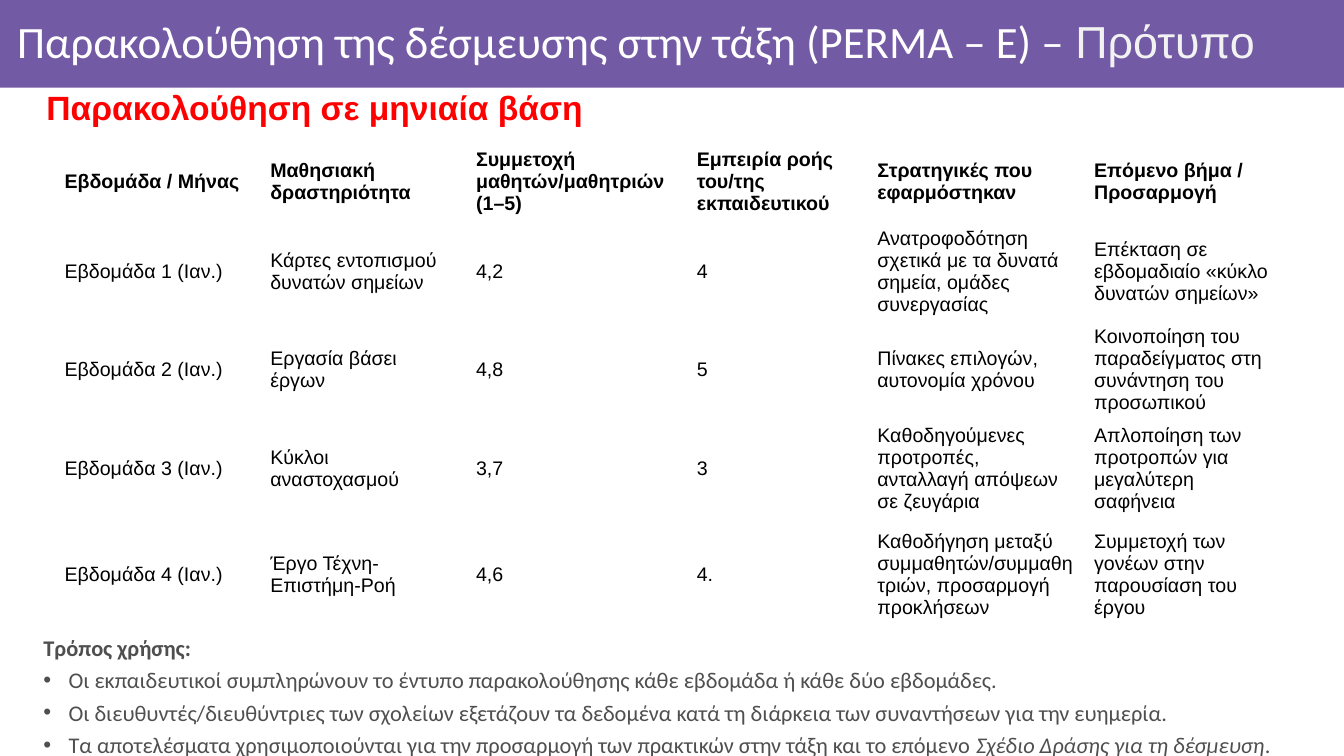
from pptx import Presentation
from pptx.dml.color import RGBColor
from pptx.enum.shapes import MSO_SHAPE
from pptx.enum.text import MSO_ANCHOR, MSO_AUTO_SIZE, PP_ALIGN
from pptx.util import Pt
from lxml.etree import SubElement
from pptx.oxml.ns import qn

HUES = {"band": "735AA5", "white": "FFFFFF", "pale": "F2F2F2",
        "red": "FF0000", "black": "000000", "grey": "4F4F50"}
WIDTHS = [147, 147, 157.7, 129, 154.8, 147]
HEIGHTS = [58.3, 58.3, 58.3, 58.3, 82]
ROWS = [
    ["Εβδομάδα / Μήνας", "Μαθησιακή δραστηριότητα",
     "Συμμετοχή μαθητών/μαθητριών (1–5)",
     "Εμπειρία ροής του/της εκπαιδευτικού",
     "Στρατηγικές που εφαρμόστηκαν", "Επόμενο βήμα / Προσαρμογή"],
    ["Εβδομάδα 1 (Ιαν.)", "Κάρτες εντοπισμού δυνατών σημείων", "4,2", "4",
     "Ανατροφοδότηση σχετικά με τα δυνατά σημεία, ομάδες συνεργασίας",
     "Επέκταση σε εβδομαδιαίο «κύκλο δυνατών σημείων»"],
    ["Εβδομάδα 2 (Ιαν.)", "Εργασία βάσει έργων", "4,8", "5",
     "Πίνακες επιλογών, αυτονομία χρόνου",
     "Κοινοποίηση του παραδείγματος στη συνάντηση του προσωπικού"],
    ["Εβδομάδα 3 (Ιαν.)", "Κύκλοι αναστοχασμού", "3,7", "3",
     "Καθοδηγούμενες προτροπές, ανταλλαγή απόψεων σε ζευγάρια",
     "Απλοποίηση των προτροπών για μεγαλύτερη σαφήνεια"],
    ["Εβδομάδα 4 (Ιαν.)", "Έργο Τέχνη-Επιστήμη-Ροή", "4,6", "4.",
     "Καθοδήγηση μεταξύ συμμαθητών/συμμαθητριών, προσαρμογή προκλήσεων",
     "Συμμετοχή των γονέων στην παρουσίαση του έργου"],
]
USES = [
    ["Οι εκπαιδευτικοί συμπληρώνουν το έντυπο παρακολούθησης κάθε εβδομάδα ή κάθε δύο εβδομάδες."],
    ["Οι διευθυντές/διευθύντριες των σχολείων εξετάζουν τα δεδομένα κατά τη διάρκεια των συναντήσεων για την ευημερία."],
    ["Τα αποτελέσματα χρησιμοποιούνται για την προσαρμογή των πρακτικών στην τάξη και το επόμενο ",
     "Σχέδιο Δράσης για τη δέσμευση", "."],
]


class Page:
    def __init__(self, slide):
        self.slide = slide
        self.sans = "Arial"
        self.text = "Calibri"

    def hue(self, name):
        return RGBColor.from_string(HUES[name])

    def band(self, left, top, width, height):
        shape = self.slide.shapes.add_shape(
            MSO_SHAPE.RECTANGLE, Pt(left), Pt(top), Pt(width), Pt(height))
        shape.shadow.inherit = False
        shape.fill.solid()
        shape.fill.fore_color.rgb = self.hue("band")
        shape.line.fill.background()
        self.slide.shapes._spTree.insert(2, shape._element)

    def frame(self, index, left, top, width, height, anchor=MSO_ANCHOR.MIDDLE):
        holder = self.slide.placeholders[index]
        holder.left, holder.top = Pt(left), Pt(top)
        holder.width, holder.height = Pt(width), Pt(height)
        frame = holder.text_frame
        frame.word_wrap = True
        frame.auto_size = MSO_AUTO_SIZE.NONE
        frame.vertical_anchor = anchor
        return frame

    def run(self, para, text, size, font, color, bold=False, italic=False):
        run = para.add_run()
        run.text = text
        run.font.size = Pt(size)
        run.font.name = font
        run.font.color.rgb = self.hue(color)
        run.font.bold = bold
        run.font.italic = italic

    def indent(self, para, mark=None):
        props = para._p.get_or_add_pPr()
        props.set("marL", str(Pt(36)))
        props.set("indent", str(Pt(-18)))
        if mark:
            tint = SubElement(props, qn("a:buClr"))
            SubElement(tint, qn("a:srgbClr")).set("val", HUES["grey"])
            SubElement(props, qn("a:buFont")).set("typeface", self.sans)
            SubElement(props, qn("a:buChar")).set("char", mark)
        else:
            SubElement(props, qn("a:buNone"))

    def title(self, parts):
        frame = self.frame(0, 8, 6.5, 940.3, 56.2)
        frame.margin_left = frame.margin_right = frame.margin_top = Pt(4.3)
        frame.margin_bottom = Pt(10)
        para = frame.paragraphs[0]
        para.alignment = PP_ALIGN.LEFT
        para.line_spacing = 0.9
        for text, font, color in parts:
            self.run(para, text, 32, font, color)

    def heading(self, text):
        para = self.frame(1, 8, 56.9, 940.3, 43.2).paragraphs[0]
        self.indent(para)
        para.alignment = PP_ALIGN.JUSTIFY
        para.line_spacing = 0.9
        para.space_before = Pt(0)
        self.run(para, text, 24, self.sans, "red", bold=True)

    def table(self, left, top, rows):
        table = self.slide.shapes.add_table(
            len(rows), len(WIDTHS), Pt(left), Pt(top),
            Pt(sum(WIDTHS)), Pt(sum(HEIGHTS))).table
        table.horz_banding = table.first_row = False
        for col, width in zip(table.columns, WIDTHS):
            col.width = Pt(width)
        for row, height in zip(table.rows, HEIGHTS):
            row.height = Pt(height)
        for i, row in enumerate(rows):
            for j, text in enumerate(row):
                cell = table.cell(i, j)
                cell.fill.background()
                cell.vertical_anchor = MSO_ANCHOR.MIDDLE
                self.run(cell.text_frame.paragraphs[0], text, 14,
                         self.sans, "black", bold=i == 0)

    def guide(self, head, items):
        frame = self.frame(2, 5.8, 444.2, 1002.2, 126.7, MSO_ANCHOR.TOP)
        frame.margin_top = Pt(8.5)
        para = frame.paragraphs[0]
        self.indent(para)
        para.space_before = Pt(0)
        self.run(para, head, 16, self.text, "grey", bold=True)
        for parts in items:
            para = frame.add_paragraph()
            self.indent(para, "•")
            para.space_before = Pt(4)
            for i, text in enumerate(parts):
                self.run(para, text, 16, self.text, "grey", italic=i == 1)


def main():
    deck = Presentation()
    deck.slide_width, deck.slide_height = Pt(960), Pt(540)
    page = Page(deck.slides.add_slide(deck.slide_layouts[3]))
    page.band(0, 0, 960, 62.6)
    page.title([
        ("Παρακολούθηση της δέσμευσης στην τάξη (PERMA – E) – ", page.text, "white"),
        ("Πρότυπο", page.sans, "pale")])
    page.heading("Παρακολούθηση σε μηνιαία βάση")
    page.table(38.9, 100.8, ROWS)
    page.guide("Τρόπος χρήσης:", USES)
    deck.save("out.pptx")


if __name__ == "__main__":
    main()
